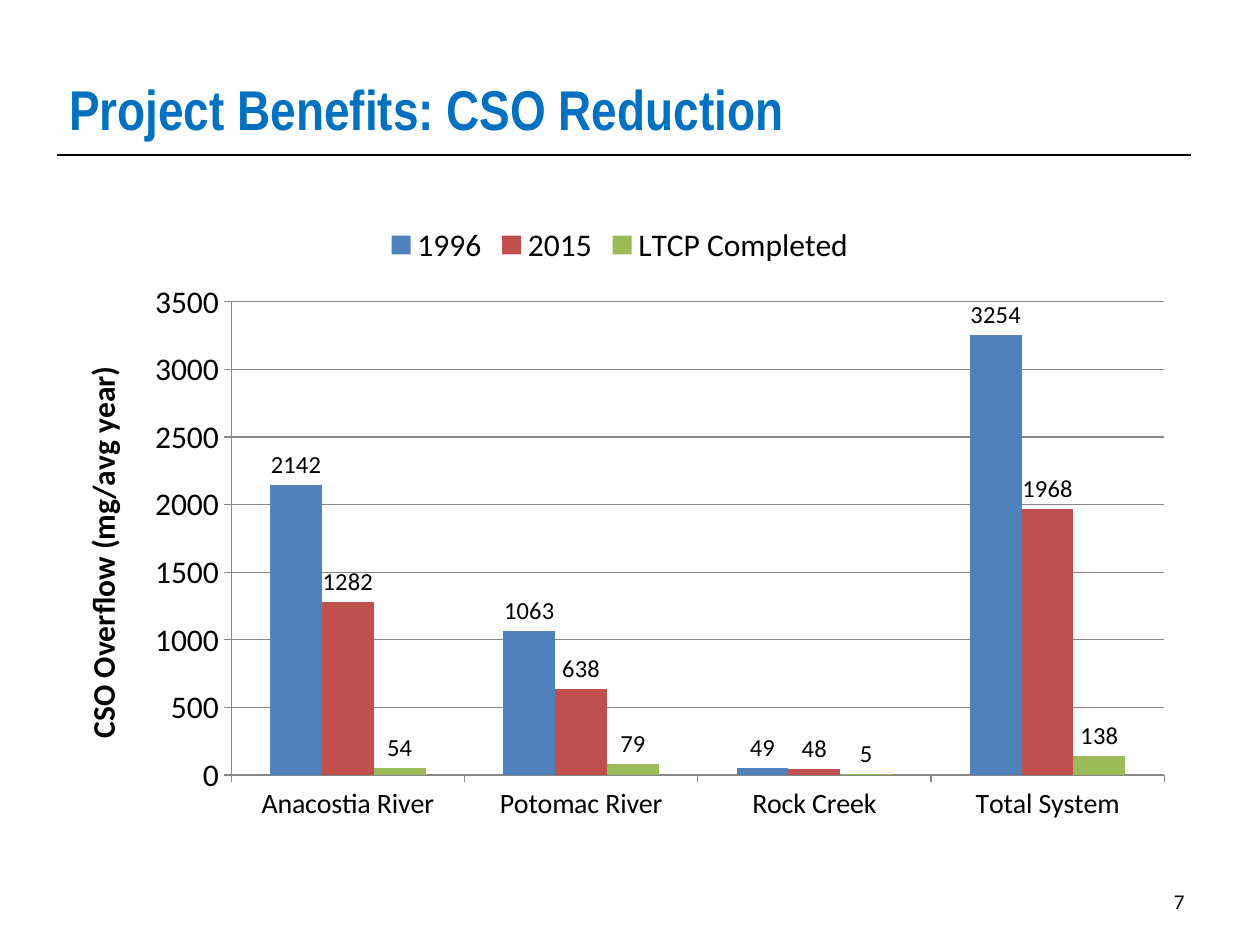
from lxml import etree
from pptx import Presentation
from pptx.chart.data import CategoryChartData
from pptx.dml.color import RGBColor
from pptx.enum.chart import XL_CHART_TYPE, XL_LABEL_POSITION, XL_LEGEND_POSITION, XL_TICK_MARK
from pptx.enum.shapes import MSO_CONNECTOR
from pptx.enum.text import MSO_ANCHOR, PP_ALIGN
from pptx.oxml.ns import qn
from pptx.util import Inches, Pt

COLUMNS = XL_CHART_TYPE.COLUMN_CLUSTERED
OUTSIDE_END = XL_LABEL_POSITION.OUTSIDE_END
LEGEND_TOP = XL_LEGEND_POSITION.TOP
TICK_OUT = XL_TICK_MARK.OUTSIDE
STRAIGHT = MSO_CONNECTOR.STRAIGHT
MIDDLE, BOTTOM = MSO_ANCHOR.MIDDLE, MSO_ANCHOR.BOTTOM
LEFT, RIGHT = PP_ALIGN.LEFT, PP_ALIGN.RIGHT

TITLE_ONLY_LAYOUT = 5
TITLE_FONT, BODY_FONT = "Arial Narrow", "Calibri"
COLORS = {
    "text": "000000",
    "title": "0070C0",
    "grid": "868686",
    "1996": "4F81BD",
    "2015": "C0504D",
    "LTCP Completed": "9BBB59",
}

RIVERS = ["Anacostia River", "Potomac River", "Rock Creek", "Total System"]
OVERFLOWS = {
    "1996": [2142, 1063, 49, 3254],
    "2015": [1282, 638, 48, 1968],
    "LTCP Completed": [54, 79, 5, 138],
}


class SlideBuilder:
    """Holds the style and the current slide."""

    def __init__(self, deck):
        self.slide = deck.slides.add_slide(deck.slide_layouts[TITLE_ONLY_LAYOUT])

    def color(self, name):
        return RGBColor.from_string(COLORS[name])

    def set_font(self, font, size, color="text", name=BODY_FONT, bold=False):
        font.name, font.size, font.bold = name, Pt(size), bold
        font.color.rgb = self.color(color)

    def title(self, text, left, top, width, height):
        box = self.slide.shapes.title
        box.left, box.top = Inches(left), Inches(top)
        box.width, box.height = Inches(width), Inches(height)
        frame = box.text_frame
        frame.text = text
        frame.vertical_anchor = BOTTOM
        para = frame.paragraphs[0]
        para.alignment = LEFT
        para.line_spacing = 0.85
        self.set_font(para.font, 32, "title", TITLE_FONT, bold=True)

    def rule(self, left, top, width):
        line = self.slide.shapes.add_connector(
            STRAIGHT, Inches(left), Inches(top), Inches(left + width), Inches(top))
        line.line.color.rgb = self.color("text")
        line.line.width = Pt(1.25)
        etree.SubElement(line.element.spPr, qn("a:effectLst"))

    def text(self, text, left, top, width, height, size, align):
        box = self.slide.shapes.add_textbox(
            Inches(left), Inches(top), Inches(width), Inches(height))
        frame = box.text_frame
        frame.word_wrap = True
        frame.vertical_anchor = MIDDLE
        frame.text = text
        para = frame.paragraphs[0]
        para.alignment = align
        self.set_font(para.font, size)

    def column_chart(self, categories, values, axis_title, left, top, width, height):
        data = CategoryChartData()
        data.categories = categories
        for name, numbers in values.items():
            data.add_series(name, numbers)
        chart = self.slide.shapes.add_chart(
            COLUMNS, Inches(left), Inches(top), Inches(width), Inches(height), data).chart
        self.set_font(chart.font, 18)
        chart.has_title = False

        # Legend
        chart.has_legend = True
        chart.legend.position = LEGEND_TOP
        chart.legend.include_in_layout = False

        # Axes
        for axis in (chart.category_axis, chart.value_axis):
            axis.major_tick_mark = TICK_OUT
            axis.format.line.color.rgb = self.color("grid")
        self.set_font(chart.category_axis.tick_labels.font, 16)
        value_axis = chart.value_axis
        value_axis.has_major_gridlines = True
        value_axis.major_gridlines.format.line.color.rgb = self.color("grid")
        title_frame = value_axis.axis_title.text_frame
        title_frame.text = axis_title
        self.set_font(title_frame.paragraphs[0].font, 18, bold=True)

        # Columns and their labels
        plot = chart.plots[0]
        plot.gap_width = 150
        plot.overlap = 0
        plot.vary_by_categories = False
        for series in plot.series:
            series.format.fill.solid()
            series.format.fill.fore_color.rgb = self.color(series.name)
            labels = series.data_labels
            labels.show_value = True
            labels.position = OUTSIDE_END
            self.set_font(labels.font, 14)


def main():
    deck = Presentation()
    deck.slide_width, deck.slide_height = Inches(10), Inches(7.5)
    page = SlideBuilder(deck)

    # Heading
    page.rule(0.45, 1.23, 9)
    page.title("Project Benefits: CSO Reduction", 0.45, 0.15, 9, 1.03)

    # Overflow by river
    page.column_chart(RIVERS, OVERFLOWS, "CSO Overflow (mg/avg year)", 0.42, 1.67, 9, 4.95)

    # Page number
    page.text("7", 7.17, 6.95, 2.33, 0.4, 12, RIGHT)

    deck.save("out.pptx")


if __name__ == "__main__":
    main()
